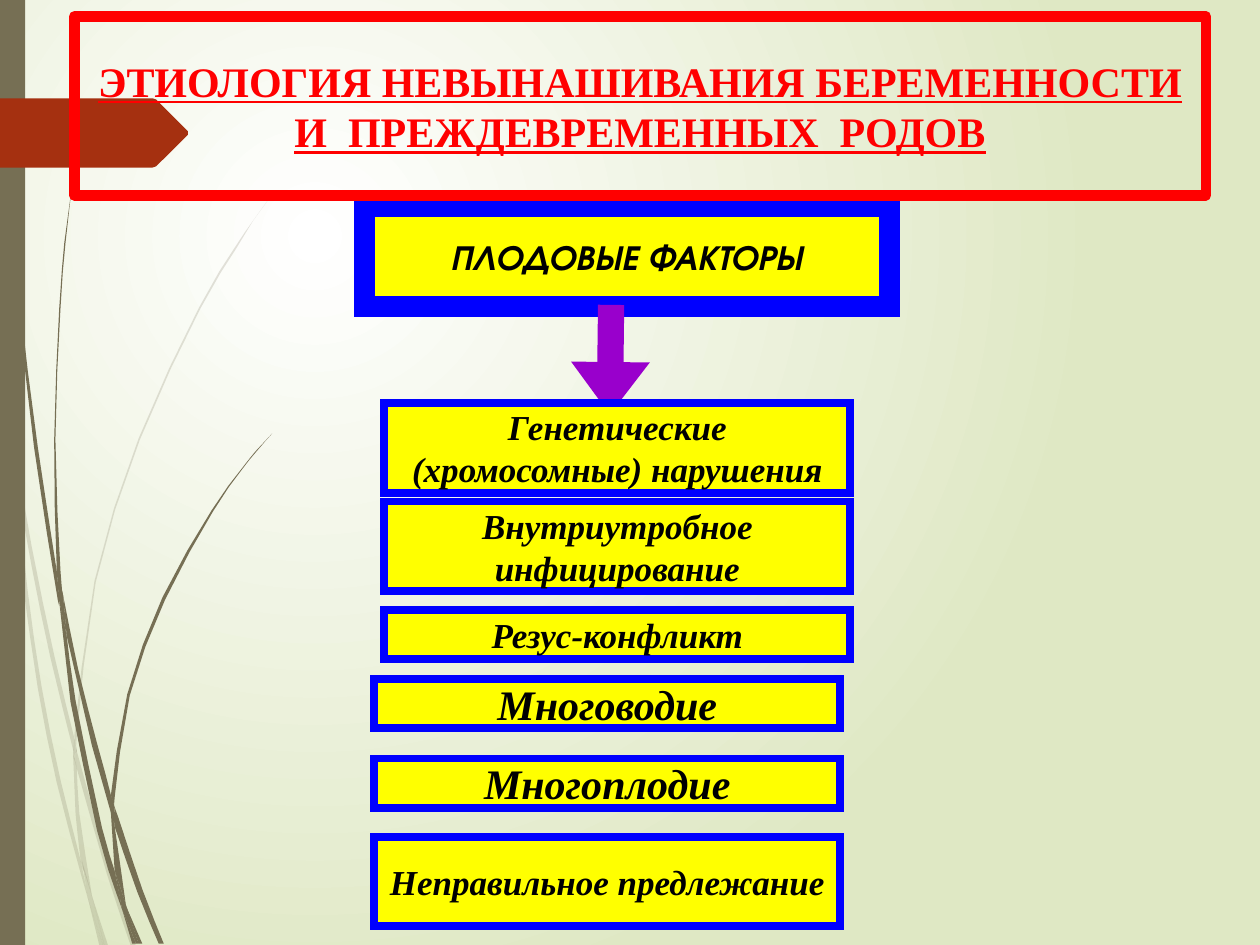
from dataclasses import dataclass

from lxml.etree import SubElement as Sub
from pptx import Presentation
from pptx.dml.color import RGBColor as Rgb
from pptx.enum.shapes import MSO_CONNECTOR as Conn, MSO_SHAPE as Kind
from pptx.enum.text import MSO_ANCHOR as Anchor, PP_ALIGN as Align
from pptx.oxml import parse_xml
from pptx.oxml.ns import nsdecls, qn
from pptx.util import Inches, Pt


@dataclass(frozen=True)
class Theme:
    serif: str = "Times New Roman"
    sans: str = "TeX Gyre Adventor"
    large: int = 24
    small: int = 20
    red: str = "FF0000"
    blue: str = "0000FF"
    yellow: str = "FFFF00"
    black: str = "000000"
    purple: str = "9900CC"
    bark: str = "766F54"
    rust: str = "A53010"
    light: str = "FFFFFF"
    pale: str = "DFE8C4"


def write(shape, text, size, font, color, bold=True, slant=True, under=False):
    frame = shape.text_frame
    frame.word_wrap = True
    frame.vertical_anchor = Anchor.MIDDLE
    para = frame.paragraphs[0]
    para.alignment = Align.CENTER
    run = para.add_run()
    run.text = text
    face = run.font
    face.size, face.name = Pt(size), font
    face.bold, face.italic, face.underline = bold, slant, under
    face.color.rgb = Rgb.from_string(color)


def smooth(knots):
    ends = [knots[0], *knots, knots[-1]]
    curve = []
    for a, b, c, d in zip(ends, ends[1:], ends[2:], ends[3:]):
        curve += [b, [(9 * (q + r) - p - s) / 16 for p, q, r, s in zip(a, b, c, d)]]
    return curve + [knots[-1]]


class Board:
    def __init__(self, deck, theme):
        self.theme = theme
        self.slide = deck.slides.add_slide(deck.slide_layouts[6])
        self.shapes = self.slide.shapes

    def glow(self):
        stops = "".join(
            f'<a:gs pos="{pos}"><a:srgbClr val="{color}"/></a:gs>'
            for pos, color in ((0, self.theme.light), (100000, self.theme.pale)))
        back = parse_xml(
            f'<p:bg {nsdecls("p", "a")}><p:bgPr><a:gradFill><a:gsLst>{stops}</a:gsLst>'
            '<a:path path="circle"><a:fillToRect l="50000" t="50000" r="100000" b="100000"/>'
            '</a:path></a:gradFill><a:effectLst/></p:bgPr></p:bg>')
        self.slide.element.cSld.insert(0, back)

    def paint(self, shape, fill):
        shape.shadow.inherit = False
        shape.line.fill.background()
        if fill:
            shape.fill.solid()
            shape.fill.fore_color.rgb = Rgb.from_string(fill)
        else:
            shape.fill.background()
        return shape

    def block(self, x, y, w, h, fill):
        shape = self.shapes.add_shape(
            Kind.RECTANGLE, Inches(x), Inches(y), Inches(w), Inches(h))
        return self.paint(shape, fill)

    def box(self, text, x, y, w, h, fill, edge, width, join="miter", **style):
        shape = self.block(x, y, w, h, fill)
        shape.line.color.rgb = Rgb.from_string(edge)
        shape.line.width = Pt(width)
        Sub(shape.line._get_or_add_ln(), qn(f"a:{join}"))
        write(shape, text, **style)

    def outline(self, knots, fill):
        dots = [(Inches(x), Inches(y)) for x, y in knots]
        pen = self.shapes.build_freeform(*dots[0], scale=1.0)
        pen.add_line_segments(dots[1:], close=True)
        return self.paint(pen.convert_to_shape(), fill)

    def blade(self, down, up, alpha=None):
        shape = self.outline(smooth(down) + smooth(up), self.theme.bark)
        if alpha:
            tint = shape.fill._xPr.find(qn("a:solidFill"))[0]
            Sub(tint, qn("a:alpha"), val=str(alpha * 1000))

    def arrow(self, x1, y1, x2, y2, color, width):
        link = self.shapes.add_connector(
            Conn.STRAIGHT, Inches(x1), Inches(y1), Inches(x2), Inches(y2))
        link.line.color.rgb = Rgb.from_string(color)
        link.line.width = Pt(width)
        Sub(link.line._get_or_add_ln(), qn("a:tailEnd"), type="triangle", w="med", len="sm")
        Sub(link._element.spPr, qn("a:effectLst"))


FAINT = [
    ([(0, 2.82), (0.06, 3.22), (0.08, 3.5)], [(0.07, 3.44), (0, 2.99)]),
    ([(0.1, 3.45), (0.25, 4.33), (0.43, 5.2), (0.59, 5.86)],
     [(0.59, 5.99), (0.4, 5.22), (0.25, 4.49), (0.12, 3.76)]),
    ([(0.61, 5.96), (0.64, 6.07), (0.88, 6.92), (1.08, 7.51)],
     [(1.04, 7.51), (0.85, 6.94), (0.61, 6.1)]),
    ([(0.73, 7.11), (0.86, 7.51)], [(0.83, 7.51)]),
    ([(0.08, 3.5), (0.12, 3.76), (0.22, 4.69), (0.33, 5.45), (0.48, 6.19), (0.64, 6.83),
      (0.7, 7.14)], [(0.64, 6.93), (0.45, 6.21), (0.3, 5.46), (0.19, 4.7)]),
    ([(0.58, 5.99), (0.61, 6.1), (0.63, 6.46), (0.73, 7.11)],
     [(0.67, 6.92), (0.64, 6.83), (0.6, 6.46)]),
    ([(2.17, 1.53), (2.01, 1.75), (1.86, 1.97), (1.58, 2.44), (1.1, 3.48), (0.75, 4.61),
      (0.59, 5.84)], [(0.61, 5.96), (0.61, 5.84), (0.76, 4.62), (1.11, 3.49), (1.59, 2.45),
                      (1.87, 1.98), (2.01, 1.75)]),
    ([(0.7, 7.14), (0.82, 7.51)], [(0.79, 7.51)]),
    ([(0.59, 5.86), (0.61, 5.96), (0.61, 6.1)], [(0.58, 5.99)]),
    ([(0.65, 6.83), (0.73, 7.11), (0.83, 7.51)], [(0.82, 7.51), (0.7, 7.14)]),
]
DARK = [
    ([(0.03, 0), (0.06, 1.09), (0.15, 2.32), (0.3, 3.55), (0.45, 4.53), (0.47, 4.81)],
     [(0.46, 4.77), (0.27, 3.55), (0.14, 2.33), (0.05, 1.1), (0.02, 0)]),
    ([(0.5, 4.72), (0.62, 5.31), (0.77, 5.9), (0.88, 6.31), (0.88, 6.45)],
     [(0.73, 5.92), (0.53, 5.05)]),
    ([(0.91, 6.41), (0.94, 6.49), (1.13, 7.06), (1.3, 7.49)],
     [(1.26, 7.49), (1.09, 7.08), (0.91, 6.56)]),
    ([(0.47, 4.77), (0.53, 5.05), (0.6, 5.56), (0.81, 6.57), (0.91, 6.91), (0.97, 7.22)],
     [(0.92, 7.08), (0.77, 6.59), (0.56, 5.57)]),
    ([(0.58, 1.41), (0.52, 1.93), (0.48, 2.45), (0.44, 3.49), (0.48, 4.53), (0.5, 4.72)],
     [(0.49, 4.72), (0.45, 4.49), (0.43, 3.49), (0.47, 2.45), (0.51, 1.93)]),
    ([(1, 7.19), (1.13, 7.49)], [(1.1, 7.49)]),
    ([(0.45, 4.49), (0.5, 4.72), (0.53, 5.05)], [(0.47, 4.77), (0.45, 4.53)]),
    ([(2.16, 3.44), (2.03, 3.59), (1.91, 3.74), (1.69, 4.06), (1.31, 4.76), (1.03, 5.52),
      (0.91, 6.33), (0.91, 6.41)], [(0.88, 6.31), (1.01, 5.51), (1.29, 4.74), (1.68, 4.05),
                                    (1.91, 3.73), (2.03, 3.58)]),
    ([(0.97, 7.22), (1.08, 7.49)], [(1.05, 7.49)]),
    ([(0.88, 6.45), (0.91, 6.56), (1, 7.19)], [(0.96, 7.06), (0.91, 6.91)]),
    ([(0.88, 6.31), (0.91, 6.41), (0.91, 6.56)], [(0.88, 6.45)]),
    ([(0.91, 6.91), (0.96, 7.06), (1.1, 7.49)], [(1.08, 7.49), (0.97, 7.22)]),
]
TAB = [(0, 0.78), (1.21, 0.78), (1.24, 0.79), (1.49, 1.04), (1.49, 1.07), (1.24, 1.32),
       (1.21, 1.33), (0, 1.33)]


def main():
    deck = Presentation()
    deck.slide_width, deck.slide_height = Inches(10), Inches(7.5)
    theme = Theme()
    board = Board(deck, theme)

    board.glow()
    for down, up in FAINT:
        board.blade(down, up, alpha=20)
    for down, up in DARK:
        board.blade(down, up)
    board.block(0, 0, 0.2, 7.5, theme.bark)
    board.outline(TAB, theme.rust)

    board.box("ПЛОДОВЫЕ ФАКТОРЫ", 2.89, 1.64, 4.17, 0.79, theme.yellow, theme.blue, 12,
              size=theme.small, font=theme.sans, color=theme.black)
    board.arrow(4.85, 2.42, 4.84, 3.29, theme.purple, 15)

    left, right, low, high = 2.97, 3.05, 0.39, 0.71
    causes = [
        ("Генетические (хромосомные) нарушения", right, 3.2, high, theme.small),
        ("Внутриутробное инфицирование", right, 3.98, high, theme.small),
        ("Резус-конфликт", right, 4.84, low, theme.small),
        ("Многоводие", left, 5.39, low, theme.large),
        ("Многоплодие", left, 6.02, low, theme.large),
        ("Неправильное предлежание", left, 6.64, high, theme.small),
    ]
    for text, x, y, tall, size in causes:
        board.box(text, x, y, 3.7, tall, theme.yellow, theme.blue, 4.5,
                  size=size, font=theme.serif, color=theme.black)

    board.box("ЭТИОЛОГИЯ НЕВЫНАШИВАНИЯ БЕРЕМЕННОСТИ И  ПРЕЖДЕВРЕМЕННЫХ  РОДОВ",
              0.59, 0.13, 8.98, 1.42, None, theme.red, 6, join="round",
              size=theme.large, font=theme.serif, color=theme.red, slant=False, under=True)

    deck.save("out.pptx")


if __name__ == "__main__":
    main()
